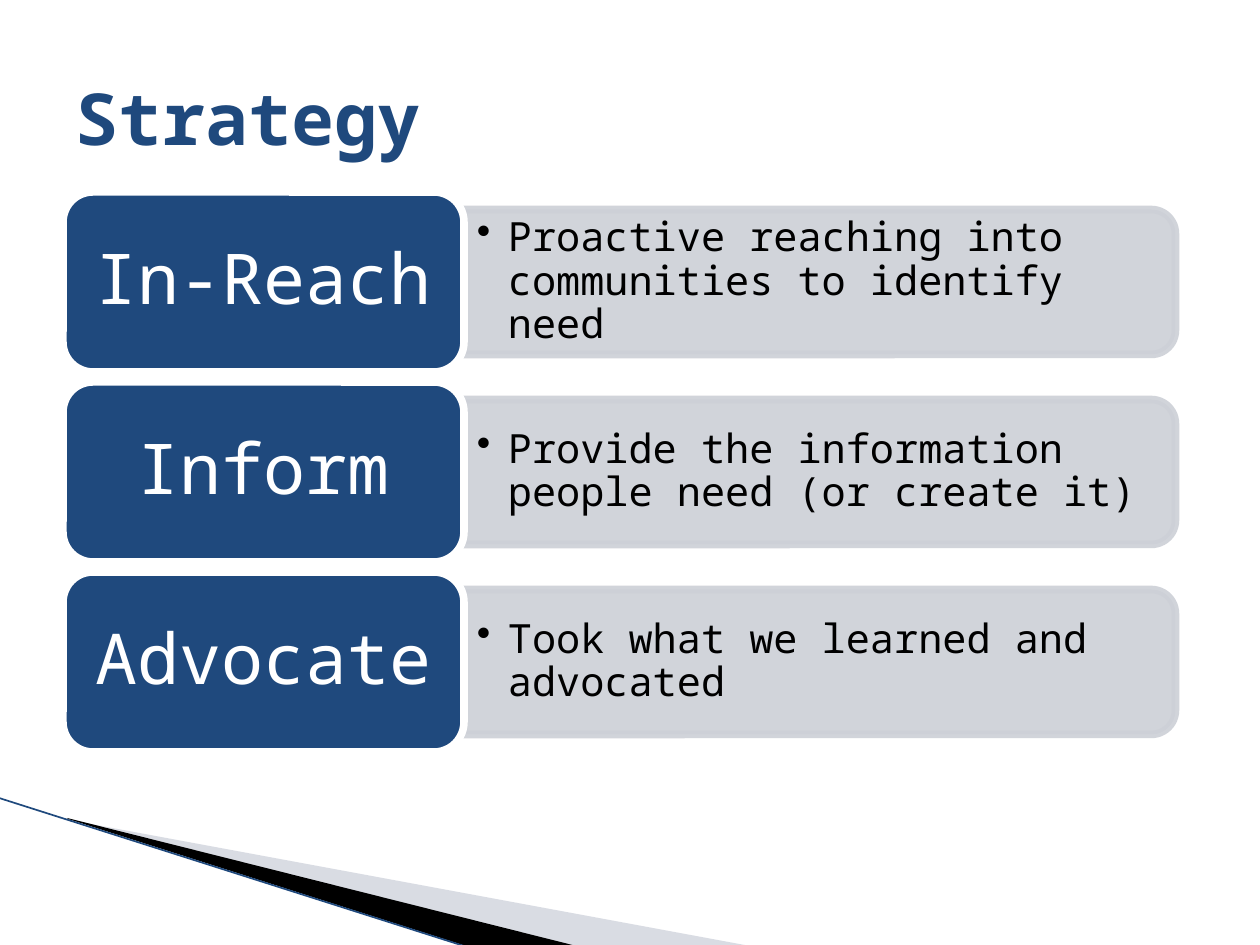
"""Build the Strategy slide: three labelled bars above a swoosh of wedges."""
from dataclasses import dataclass

from lxml import etree
from pptx import Presentation
from pptx.dml.color import RGBColor
from pptx.enum.shapes import MSO_CONNECTOR, MSO_SHAPE
from pptx.enum.text import MSO_ANCHOR, PP_ALIGN
from pptx.oxml.ns import qn
from pptx.util import Pt

PX = 914400 // 126
ROUND_RECT = MSO_SHAPE.ROUNDED_RECTANGLE
ROUND_END = MSO_SHAPE.ROUND_2_SAME_RECTANGLE
STRAIGHT = MSO_CONNECTOR.STRAIGHT
MIDDLE = MSO_ANCHOR.MIDDLE
LEFT, CENTER = PP_ALIGN.LEFT, PP_ALIGN.CENTER


@dataclass(frozen=True)
class Theme:
    font: str = "Noto Sans Mono"
    navy: str = "1F497D"
    bar: str = "CDD0D7"
    mist: str = "A1A8BA"
    black: str = "000000"
    white: str = "FFFFFF"
    title_size: int = 41
    label_size: int = 40
    detail_size: int = 23
    outline: float = 4.33
    hairline: float = 0.95


@dataclass(frozen=True)
class Box:
    left: int
    top: int
    width: int
    height: int

    def emu(self) -> list[int]:
        return [n * PX for n in (self.left, self.top, self.width, self.height)]


@dataclass(frozen=True)
class Step:
    label: str
    detail: str


@dataclass(frozen=True)
class Wedge:
    points: tuple[tuple[int, int], ...]
    color: str
    opacity: int


THEME = Theme()
STEPS = (
    Step("In-Reach", "Proactive reaching into communities to identify need"),
    Step("Inform", "Provide the information people need (or create it)"),
    Step("Advocate", "Took what we learned and advocated"),
)
WEDGES = (
    Wedge(((69, 820), (750, 946), (575, 946), (69, 819)), THEME.mist, 40),
    Wedge(((67, 818), (576, 946), (469, 947), (68, 819)), THEME.black, 100),
)
FIRST_TOP, PITCH = 192, 190
LABEL_LEFT, LABEL_WIDTH, LABEL_HEIGHT = 63, 401, 180
BAR_LENGTH, BAR_HEIGHT = 712, 145
DETAIL_WIDTH, DETAIL_HEIGHT = 706, 130
INDENT = 31


def rgb(color: str) -> RGBColor:
    return RGBColor.from_string(color)


def set_opacity(shape, percent: int) -> None:
    for color in shape._element.spPr.iter(qn("a:srgbClr")):
        etree.SubElement(color, qn("a:alpha"), val=str(percent * 1000))


def write(shape, text: str, size: int, color: str, align=LEFT, inset: int = 13,
          bold: bool = False, bullet: bool = False, spacing: float = 0.9) -> None:
    frame = shape.text_frame
    frame.word_wrap = True
    frame.vertical_anchor = MIDDLE
    frame.margin_left = frame.margin_right = inset * PX
    frame.margin_top = frame.margin_bottom = 6 * PX
    paragraph = frame.paragraphs[0]
    paragraph.alignment = align
    paragraph.line_spacing = spacing
    if bullet:
        properties = paragraph._p.get_or_add_pPr()
        properties.set("marL", str(INDENT * PX))
        properties.set("indent", str(-INDENT * PX))
        etree.SubElement(properties, qn("a:buChar"), char="•")
    run = paragraph.add_run()
    run.text = text
    run.font.name = THEME.font
    run.font.size = Pt(size)
    run.font.bold = bold
    run.font.color.rgb = rgb(color)


def add_panel(slide, kind, box: Box, fill: str, line: str):
    panel = slide.shapes.add_shape(kind, *box.emu())
    panel.shadow.inherit = False
    panel.fill.solid()
    panel.fill.fore_color.rgb = rgb(fill)
    panel.line.color.rgb = rgb(line)
    panel.line.width = Pt(THEME.outline)
    return panel


def add_step(slide, step: Step, top: int) -> None:
    middle = top + LABEL_HEIGHT // 2
    bar_left = LABEL_LEFT + LABEL_WIDTH
    upright = Box(bar_left + (BAR_LENGTH - BAR_HEIGHT) // 2,
                  middle - BAR_LENGTH // 2, BAR_HEIGHT, BAR_LENGTH)
    bar = add_panel(slide, ROUND_END, upright, THEME.bar, THEME.bar)
    bar.rotation = 90
    set_opacity(bar, 90)
    detail_box = Box(bar_left, middle - DETAIL_HEIGHT // 2, DETAIL_WIDTH, DETAIL_HEIGHT)
    detail = slide.shapes.add_textbox(*detail_box.emu())
    write(detail, step.detail, THEME.detail_size, THEME.black, bullet=True)
    label_box = Box(LABEL_LEFT, top, LABEL_WIDTH, LABEL_HEIGHT)
    label = add_panel(slide, ROUND_RECT, label_box, THEME.navy, THEME.white)
    write(label, step.label, THEME.label_size, THEME.white, CENTER, inset=6)


def add_wedge(slide, wedge: Wedge) -> None:
    start, *rest = wedge.points
    builder = slide.shapes.build_freeform(*start, scale=PX)
    builder.add_line_segments(rest)
    swoosh = builder.convert_to_shape()
    swoosh.shadow.inherit = False
    swoosh.fill.solid()
    swoosh.fill.fore_color.rgb = rgb(wedge.color)
    swoosh.line.fill.background()
    set_opacity(swoosh, wedge.opacity)


def add_edge(slide) -> None:
    edge = slide.shapes.add_connector(STRAIGHT, -1 * PX, 798 * PX, 467 * PX, 947 * PX)
    edge.line.color.rgb = rgb(THEME.navy)
    edge.line.width = Pt(THEME.hairline)
    etree.SubElement(edge._element.spPr, qn("a:effectLst"))


def main() -> None:
    deck = Presentation()
    deck.slide_width, deck.slide_height = 1260 * PX, 945 * PX
    slide = deck.slides.add_slide(deck.slide_layouts[6])
    for wedge in WEDGES:
        add_wedge(slide, wedge)
    add_edge(slide)
    for row, step in enumerate(STEPS):
        add_step(slide, step, FIRST_TOP + row * PITCH)
    title = slide.shapes.add_textbox(*Box(63, 38, 1134, 158).emu())
    write(title, "Strategy", THEME.title_size, THEME.navy, bold=True, spacing=1.0)
    deck.save("out.pptx")


if __name__ == "__main__":
    main()
